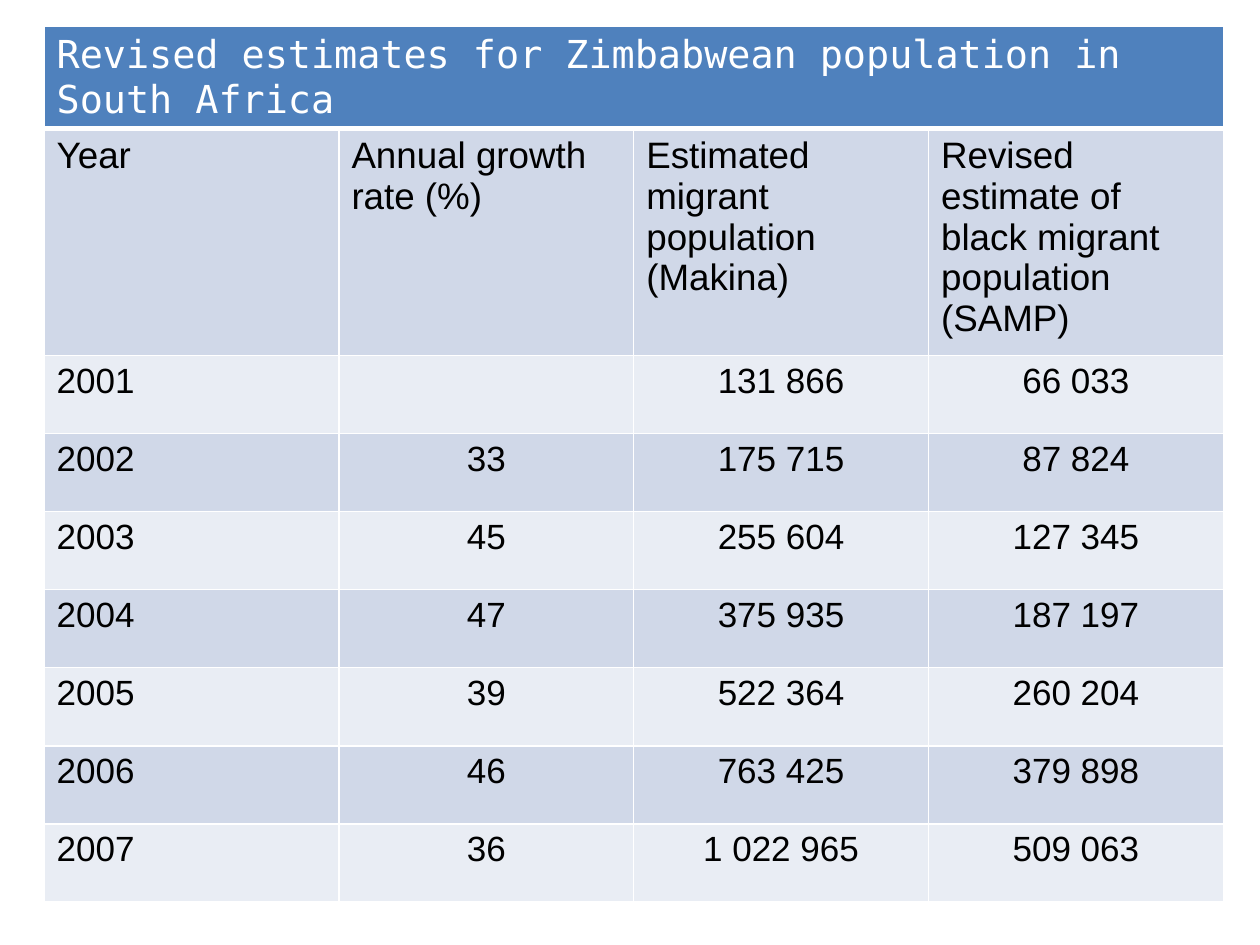
from lxml.etree import SubElement
from pptx import Presentation
from pptx.dml.color import RGBColor
from pptx.enum.text import PP_ALIGN
from pptx.oxml.ns import qn
from pptx.util import Inches, Pt

WHITE = RGBColor(0xFF, 0xFF, 0xFF)
BLACK = RGBColor(0x00, 0x00, 0x00)
TITLE_BLUE = RGBColor(0x4F, 0x81, 0xBD)
BAND_DARK = RGBColor(0xD0, 0xD8, 0xE8)
BAND_LIGHT = RGBColor(0xE9, 0xED, 0xF4)

TITLE = "Revised estimates for Zimbabwean population in South Africa"
HEADINGS = [
    "Year",
    "Annual growth rate (%)",
    "Estimated migrant population (Makina)",
    "Revised estimate of black migrant population (SAMP)",
]
ESTIMATES = [
    ("2001", "", "131 866", "66 033"),
    ("2002", "33", "175 715", "87 824"),
    ("2003", "45", "255 604", "127 345"),
    ("2004", "47", "375 935", "187 197"),
    ("2005", "39", "522 364", "260 204"),
    ("2006", "46", "763 425", "379 898"),
    ("2007", "36", "1 022 965", "509 063"),
]
ROW_HEIGHTS = [0.66, 1.8] + [0.62] * len(ESTIMATES)
COLUMN_WIDTH = 2.34


def set_borders(cell, top=1, bottom=1):
    properties = cell._tc.get_or_add_tcPr()
    for side, points in (("L", 1), ("R", 1), ("T", top), ("B", bottom)):
        border = SubElement(properties, qn(f"a:ln{side}"), w=str(Pt(points)))
        fill = SubElement(border, qn("a:solidFill"))
        SubElement(fill, qn("a:srgbClr"), val=str(WHITE))


def style_cell(cell, fill, top=1, bottom=1):
    set_borders(cell, top, bottom)
    cell.fill.solid()
    cell.fill.fore_color.rgb = fill


def write_cell(cell, text, size, color=BLACK, face="Arial", align=PP_ALIGN.LEFT):
    cell.text = text
    paragraph = cell.text_frame.paragraphs[0]
    paragraph.alignment = align
    paragraph.font.size = Pt(size)
    paragraph.font.name = face
    paragraph.font.color.rgb = color


def fill_title(table):
    for column in range(len(HEADINGS)):
        style_cell(table.cell(0, column), TITLE_BLUE, bottom=3)
    title = table.cell(0, 0)
    title.merge(table.cell(0, len(HEADINGS) - 1))
    write_cell(title, TITLE, 22, WHITE, "DejaVu Sans Mono")


def fill_headings(table):
    for column, heading in enumerate(HEADINGS):
        cell = table.cell(1, column)
        style_cell(cell, BAND_DARK, top=3)
        write_cell(cell, heading, 21)


def fill_estimates(table):
    for row, estimate in enumerate(ESTIMATES, start=2):
        band = BAND_DARK if row % 2 else BAND_LIGHT
        for column, value in enumerate(estimate):
            cell = table.cell(row, column)
            style_cell(cell, band)
            align = PP_ALIGN.CENTER if column else PP_ALIGN.LEFT
            write_cell(cell, value, 20, align=align)


def add_estimates_table(slide):
    table = slide.shapes.add_table(
        len(ROW_HEIGHTS), len(HEADINGS), Inches(0.35), Inches(0.21),
        Inches(COLUMN_WIDTH * len(HEADINGS)), Inches(sum(ROW_HEIGHTS)),
    ).table
    for column in table.columns:
        column.width = Inches(COLUMN_WIDTH)
    for row, height in zip(table.rows, ROW_HEIGHTS):
        row.height = Inches(height)
    table.first_row = False
    table.horz_banding = False
    return table


def main():
    deck = Presentation()
    deck.slide_width = Inches(10)
    deck.slide_height = Inches(7.5)
    slide = deck.slides.add_slide(deck.slide_layouts[6])
    table = add_estimates_table(slide)
    fill_title(table)
    fill_headings(table)
    fill_estimates(table)
    deck.save("out.pptx")


if __name__ == "__main__":
    main()
